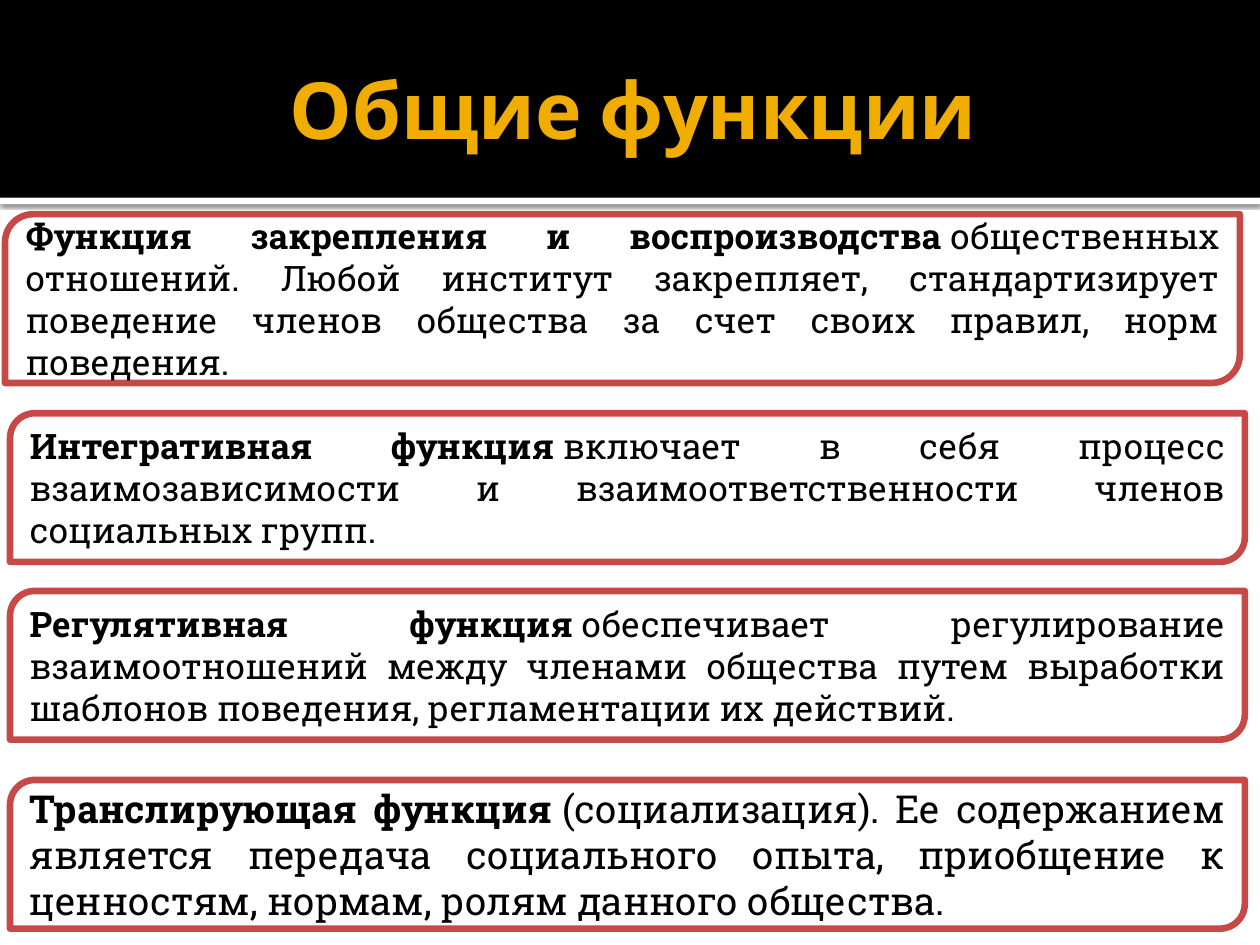
from dataclasses import dataclass

from lxml import etree
from pptx import Presentation
from pptx.dml.color import RGBColor
from pptx.enum.shapes import MSO_SHAPE as SHAPE
from pptx.enum.text import MSO_ANCHOR as ANCHOR, PP_ALIGN as ALIGN
from pptx.oxml.ns import qn
from pptx.util import Inches, Pt

NBSP = chr(160)  # joins each function name to its description


@dataclass(frozen=True)
class Theme:
    white: str = "FFFFFF"
    black: str = "000000"
    gold: str = "F0AD00"
    red: str = "C64847"
    title_font: str = "Cabin"
    body_font: str = "Roboto Slab"
    title_size: float = 45
    body_size: float = 20
    large_size: float = 22
    border: float = 3.78


def add_text(p, text, *, font, size, color, bold=False):
    r = p.add_run()
    r.text = text
    r.font.name = font
    r.font.size = Pt(size)
    r.font.bold = bold
    r.font.color.rgb = RGBColor.from_string(color)


class SlideBuilder:
    def __init__(self, slide, theme):
        self.s = slide
        self.t = theme

    def shape(self, kind, box, fill, line=None):
        sp = self.s.shapes.add_shape(kind, *map(Inches, box))
        sp.shadow.inherit = False
        sp.fill.solid()
        sp.fill.fore_color.rgb = RGBColor.from_string(fill)
        if line:
            sp.line.color.rgb = RGBColor.from_string(line)
            sp.line.width = Pt(self.t.border)
        else:
            sp.line.fill.background()
        return sp

    def shadowed_strip(self, box):
        sp = self.shape(SHAPE.RECTANGLE, box, self.t.white)
        effects = sp._element.spPr.find(qn("a:effectLst"))
        shadow = etree.SubElement(
            effects, qn("a:outerShdw"), blurRad=str(Pt(2.5)),
            dist=str(Pt(0.8)), dir="5400000", algn="tl", rotWithShape="0")
        color = etree.SubElement(shadow, qn("a:srgbClr"), val=self.t.black)
        etree.SubElement(color, qn("a:alpha"), val="60000")

    def title(self, text, box):
        tf = self.s.shapes.add_textbox(*map(Inches, box)).text_frame
        tf.word_wrap = True
        tf.vertical_anchor = ANCHOR.MIDDLE
        tf.margin_right = Inches(0.05)
        p = tf.paragraphs[0]
        p.alignment = ALIGN.CENTER
        add_text(p, text, font=self.t.title_font, size=self.t.title_size,
                 color=self.t.gold, bold=True)

    def card(self, name, description, box, size):
        sp = self.shape(SHAPE.ROUND_2_DIAG_RECTANGLE, box,
                        self.t.white, self.t.red)
        tf = sp.text_frame
        tf.word_wrap = True
        tf.vertical_anchor = ANCHOR.MIDDLE
        p = tf.paragraphs[0]
        p.alignment = ALIGN.JUSTIFY
        style = dict(font=self.t.body_font, size=size, color=self.t.black)
        add_text(p, name, bold=True, **style)
        add_text(p, NBSP + description, **style)


def main():
    prs = Presentation()
    prs.slide_width, prs.slide_height = Inches(10), Inches(7.5)
    theme = Theme()
    b = SlideBuilder(prs.slides.add_slide(prs.slide_layouts[6]), theme)

    # Header band
    b.shadowed_strip((0, 1.57, 10, 0.05))
    b.shape(SHAPE.RECTANGLE, (0, 0, 10, 1.57), theme.black)
    b.title("Общие функции", (0.5, 0.17, 9, 1.37))

    # Function cards: left, top, height, text size, name, description
    cards = [
        (0.04, 1.7, 1.34, theme.body_size,
         "Функция закрепления и воспроизводства",
         "общественных отношений. Любой институт закрепляет, "
         "стандартизирует поведение членов общества за счет своих "
         "правил, норм поведения."),
        (0.08, 3.28, 1.18, theme.body_size,
         "Интегративная функция",
         "включает в себя процесс взаимозависимости и "
         "взаимоответственности членов социальных групп."),
        (0.08, 4.69, 1.18, theme.body_size,
         "Регулятивная функция",
         "обеспечивает регулирование взаимоотношений между членами "
         "общества путем выработки шаблонов поведения, "
         "регламентации их действий."),
        (0.08, 6.19, 1.18, theme.large_size,
         "Транслирующая функция",
         "(социализация). Ее содержанием является передача "
         "социального опыта, приобщение к ценностям, нормам, "
         "ролям данного общества."),
    ]
    for left, top, height, size, name, description in cards:
        b.card(name, description, (left, top, 9.8, height), size)

    prs.save("out.pptx")


if __name__ == "__main__":
    main()
